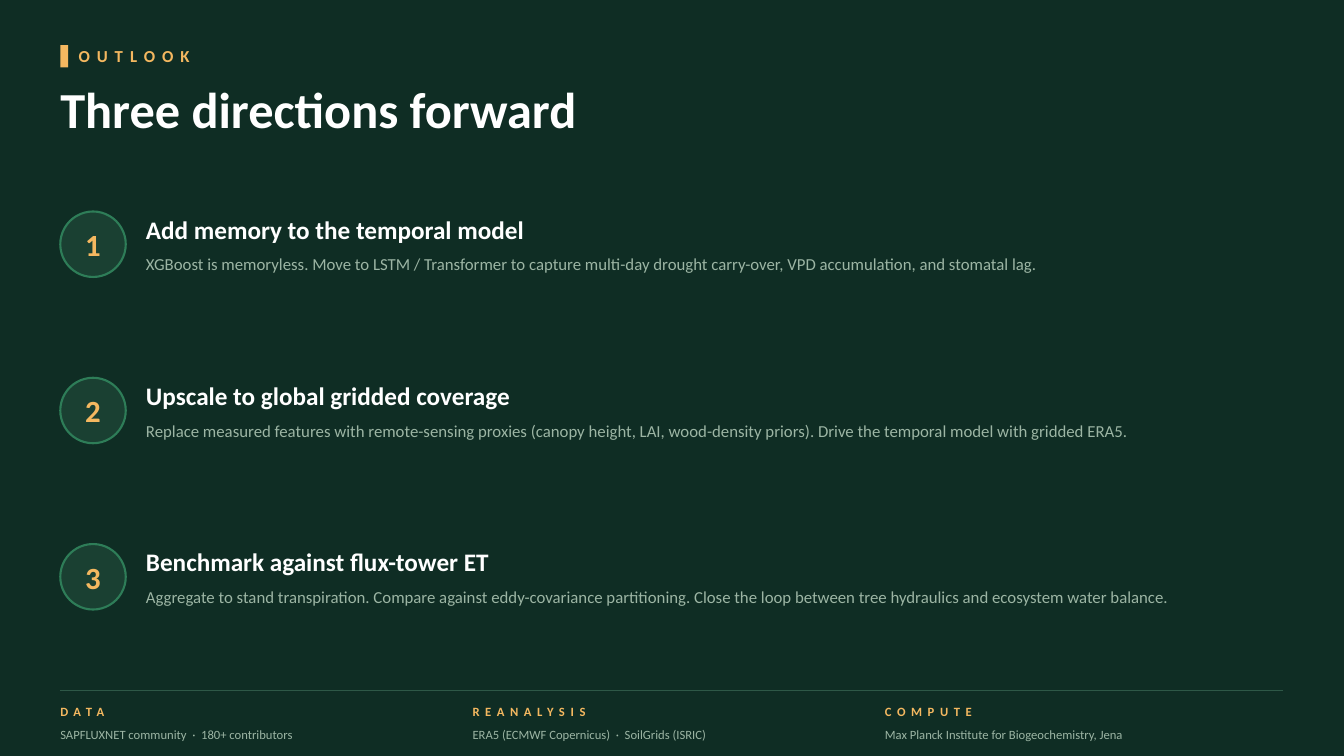
from dataclasses import dataclass

from lxml.etree import SubElement
from pptx import Presentation
from pptx.dml.color import RGBColor
from pptx.enum.shapes import MSO_CONNECTOR as Connector, MSO_SHAPE as Shape
from pptx.enum.text import MSO_ANCHOR as Anchor, PP_ALIGN as Align
from pptx.oxml.ns import qn
from pptx.slide import Slide
from pptx.text.text import TextFrame
from pptx.util import Cm, Pt

FOREST = RGBColor(0x0F, 0x2D, 0x24)
MOSS = RGBColor(0x1A, 0x40, 0x32)
LEAF = RGBColor(0x2E, 0x7D, 0x58)
RULE = RGBColor(0x2E, 0x58, 0x47)
AMBER = RGBColor(0xF4, 0xB8, 0x60)
SAGE = RGBColor(0x9C, 0xB5, 0xA4)
WHITE = RGBColor(0xFF, 0xFF, 0xFF)
FONT = "Calibri"

# Layout in centimetres
MARGIN = 1.52
RIGHT_EDGE = 32.33
FIRST_DIRECTION_TOP = 5.33
DIRECTION_PITCH = 4.19
CIRCLE_SIZE = 1.65
DIRECTION_LEFT = 3.68
DIRECTION_WIDTH = 27.94
RULE_TOP = 17.4
CREDIT_PITCH = 10.39
CREDIT_WIDTH = 10.26
CREDIT_HEIGHT = 0.56


@dataclass(frozen=True)
class Style:
    size: float
    color: RGBColor
    bold: bool = False
    spacing: float = 0
    anchor: Anchor = Anchor.MIDDLE
    align: Align = Align.LEFT


@dataclass(frozen=True)
class Direction:
    heading: str
    detail: str


@dataclass(frozen=True)
class Credit:
    label: str
    source: str


KICKER = Style(12, AMBER, bold=True, spacing=5)
TITLE = Style(36, WHITE, bold=True, anchor=Anchor.TOP)
NUMBER = Style(22, AMBER, bold=True, align=Align.CENTER)
HEADING = Style(18, WHITE, bold=True)
DETAIL = Style(12, SAGE, anchor=Anchor.TOP)
CREDIT_LABEL = Style(9, AMBER, bold=True, spacing=4)
CREDIT_SOURCE = Style(9, SAGE)

DIRECTIONS = [
    Direction("Add memory to the temporal model",
              "XGBoost is memoryless. Move to LSTM / Transformer to capture multi-day "
              "drought carry-over, VPD accumulation, and stomatal lag."),
    Direction("Upscale to global gridded coverage",
              "Replace measured features with remote-sensing proxies (canopy height, LAI, "
              "wood-density priors). Drive the temporal model with gridded ERA5."),
    Direction("Benchmark against flux-tower ET",
              "Aggregate to stand transpiration. Compare against eddy-covariance partitioning. "
              "Close the loop between tree hydraulics and ecosystem water balance."),
]
CREDITS = [
    Credit("DATA", "SAPFLUXNET community  ·  180+ contributors"),
    Credit("REANALYSIS", "ERA5 (ECMWF Copernicus)  ·  SoilGrids (ISRIC)"),
    Credit("COMPUTE", "Max Planck Institute for Biogeochemistry, Jena"),
]


def write(frame: TextFrame, text: str, style: Style) -> None:
    frame.word_wrap = True
    frame.vertical_anchor = style.anchor
    frame.margin_left = frame.margin_right = frame.margin_top = frame.margin_bottom = 0
    paragraph = frame.paragraphs[0]
    paragraph.alignment = style.align
    run = paragraph.add_run()
    run.text = text
    run.font.name = FONT
    run.font.size = Pt(style.size)
    run.font.bold = style.bold
    run.font.color.rgb = style.color
    if style.spacing:
        run.font._element.set("spc", str(round(style.spacing * 100)))


def add_text(slide: Slide, left: float, top: float, width: float, height: float,
             text: str, style: Style) -> None:
    box = slide.shapes.add_textbox(Cm(left), Cm(top), Cm(width), Cm(height))
    write(box.text_frame, text, style)


def add_header(slide: Slide) -> None:
    accent = slide.shapes.add_shape(Shape.RECTANGLE, Cm(MARGIN), Cm(1.14), Cm(0.2), Cm(0.56))
    accent.shadow.inherit = False
    accent.fill.solid()
    accent.fill.fore_color.rgb = AMBER
    accent.line.fill.background()
    add_text(slide, 1.98, 1.07, 12.7, 0.69, "OUTLOOK", KICKER)
    add_text(slide, MARGIN, 1.98, RIGHT_EDGE - MARGIN, 2.16, "Three directions forward", TITLE)


def add_direction(slide: Slide, index: int, direction: Direction) -> None:
    top = FIRST_DIRECTION_TOP + index * DIRECTION_PITCH
    circle = slide.shapes.add_shape(Shape.OVAL, Cm(MARGIN), Cm(top),
                                    Cm(CIRCLE_SIZE), Cm(CIRCLE_SIZE))
    circle.shadow.inherit = False
    circle.fill.solid()
    circle.fill.fore_color.rgb = MOSS
    circle.line.color.rgb = LEAF
    circle.line.width = Pt(1.5)
    write(circle.text_frame, str(index + 1), NUMBER)
    add_text(slide, DIRECTION_LEFT, top - 0.13, DIRECTION_WIDTH, 1.14, direction.heading, HEADING)
    add_text(slide, DIRECTION_LEFT, top + 1.07, DIRECTION_WIDTH, 2.41, direction.detail, DETAIL)


def add_rule(slide: Slide) -> None:
    rule = slide.shapes.add_connector(Connector.STRAIGHT, Cm(MARGIN), Cm(RULE_TOP),
                                      Cm(RIGHT_EDGE), Cm(RULE_TOP))
    rule.line.color.rgb = RULE
    rule.line.width = Pt(1)
    SubElement(rule._element.spPr, qn("a:effectLst"))


def add_credit(slide: Slide, index: int, credit: Credit) -> None:
    left = MARGIN + index * CREDIT_PITCH
    add_text(slide, left, 17.65, CREDIT_WIDTH, CREDIT_HEIGHT, credit.label, CREDIT_LABEL)
    add_text(slide, left, 18.24, CREDIT_WIDTH, CREDIT_HEIGHT, credit.source, CREDIT_SOURCE)


def main() -> None:
    deck = Presentation()
    deck.slide_width, deck.slide_height = Cm(33.87), Cm(19.05)
    slide = deck.slides.add_slide(deck.slide_layouts[6])
    slide.background.fill.solid()
    slide.background.fill.fore_color.rgb = FOREST

    add_header(slide)

    # Numbered directions
    for index, direction in enumerate(DIRECTIONS):
        add_direction(slide, index, direction)

    # Footer credits
    add_rule(slide)
    for index, credit in enumerate(CREDITS):
        add_credit(slide, index, credit)

    deck.save("out.pptx")


if __name__ == "__main__":
    main()
